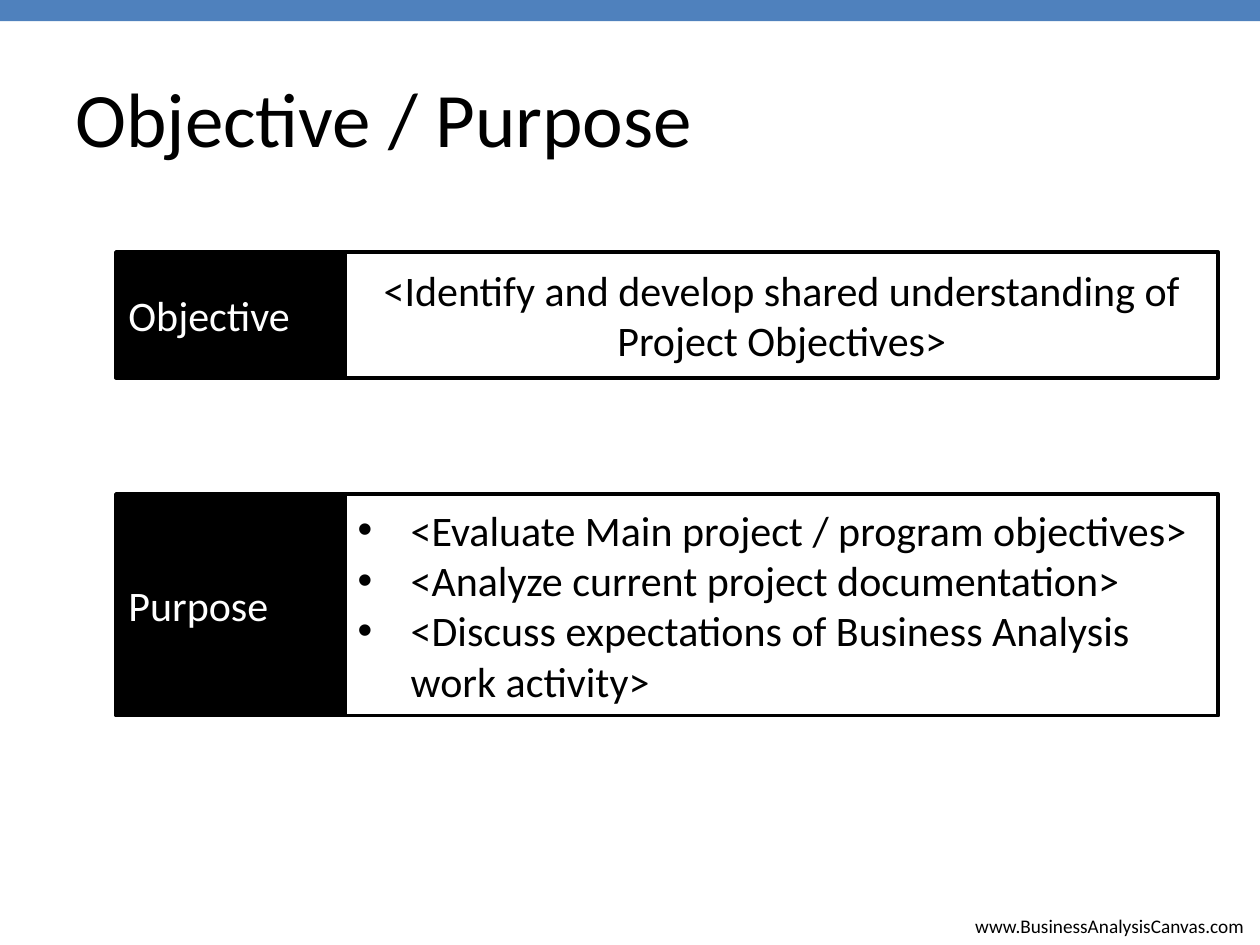
from dataclasses import dataclass

from lxml.etree import SubElement
from pptx import Presentation
from pptx.dml.color import RGBColor as Color
from pptx.enum.shapes import MSO_SHAPE as Shape
from pptx.enum.text import MSO_ANCHOR as Anchor, PP_ALIGN as Align
from pptx.oxml.ns import qn
from pptx.util import Cm, Pt


@dataclass(frozen=True)
class Theme:
    """Colours, font and type sizes of the deck."""
    accent: Color = Color(0x4F, 0x81, 0xBD)
    dark: Color = Color(0, 0, 0)
    light: Color = Color(255, 255, 255)
    font: str = "Calibri"
    title: int = 44
    body: int = 24
    footer: int = 11
    border: int = 2


class SlideBuilder:
    """Draws styled elements on the current slide."""

    def __init__(self, slide, theme):
        """Keep the slide and its theme."""
        self.slide = slide
        self.theme = theme

    def fill_text(self, box, lines, size, color, align=Align.LEFT, anchor=Anchor.MIDDLE,
                  wrap=True, bullets=False):
        """Fill a box with one paragraph per line."""
        frame = box.text_frame
        frame.word_wrap = wrap
        frame.vertical_anchor = anchor
        for index, line in enumerate(lines):
            para = frame.add_paragraph() if index else frame.paragraphs[0]
            para.alignment = align
            if bullets:
                self.bullet(para)
            span = para.add_run()
            span.text = line
            span.font.color.rgb = color
            for name, value in {"name": self.theme.font, "size": Pt(size)}.items():
                setattr(span.font, name, value)

    def bullet(self, para):
        """Give a paragraph a round bullet and a hanging indent."""
        properties = para._p.get_or_add_pPr()
        indent = Cm(1.07)
        for name, value in {"marL": indent, "indent": -indent}.items():
            properties.set(name, str(int(value)))
        SubElement(properties, qn("a:buFont"), typeface="Arial")
        SubElement(properties, qn("a:buChar"), char="•")

    def rectangle(self, left, top, width, height, fill, border=None):
        """Add a flat rectangle, bordered when a border colour is given."""
        box = self.slide.shapes.add_shape(
            Shape.RECTANGLE, Cm(left), Cm(top), Cm(width), Cm(height))
        box.shadow.inherit = False
        box.fill.solid()
        box.fill.fore_color.rgb = fill
        if border is None:
            box.line.fill.background()
        else:
            box.line.color.rgb = border
            box.line.width = Pt(self.theme.border)
        return box

    def text(self, left, top, width, height, line, size, **style):
        """Add a text box with a single line."""
        box = self.slide.shapes.add_textbox(Cm(left), Cm(top), Cm(width), Cm(height))
        self.fill_text(box, [line], size, self.theme.dark, **style)

    def row(self, top, height, label, label_width, lines, **style):
        """Add a dark label box with a light content box over its right end."""
        theme = self.theme
        label_box = self.rectangle(2.34, top, label_width, height, theme.dark, theme.dark)
        self.fill_text(label_box, [label], theme.body, theme.light)
        content_box = self.rectangle(6.96, top, 17.6, height, theme.light, theme.dark)
        self.fill_text(content_box, lines, theme.body, theme.dark, **style)


def main():
    """Build and save the deck."""
    deck = Presentation()
    deck.slide_width, deck.slide_height = Cm(25.4), Cm(19.05)
    theme = Theme()
    page = SlideBuilder(deck.slides.add_slide(deck.slide_layouts[6]), theme)

    page.rectangle(0, 0, 25.4, 0.43, theme.accent)
    page.text(19.41, 18.31, 5.99, 0.74, "www.BusinessAnalysisCanvas.com", theme.footer,
              anchor=Anchor.TOP, wrap=False)
    page.row(5.08, 2.54, "Objective", 8.1,
             ["<Identify and develop shared understanding of Project Objectives>"],
             align=Align.CENTER)
    page.row(9.96, 4.47, "Purpose", 6.15,
             ["<Evaluate Main project / program objectives>",
              "<Analyze current project documentation>",
              "<Discuss expectations of Business Analysis work activity>"],
             bullets=True)
    page.text(1.27, 0.76, 22.86, 3.18, "Objective / Purpose", theme.title)
    deck.save("out.pptx")


if __name__ == "__main__":
    main()
